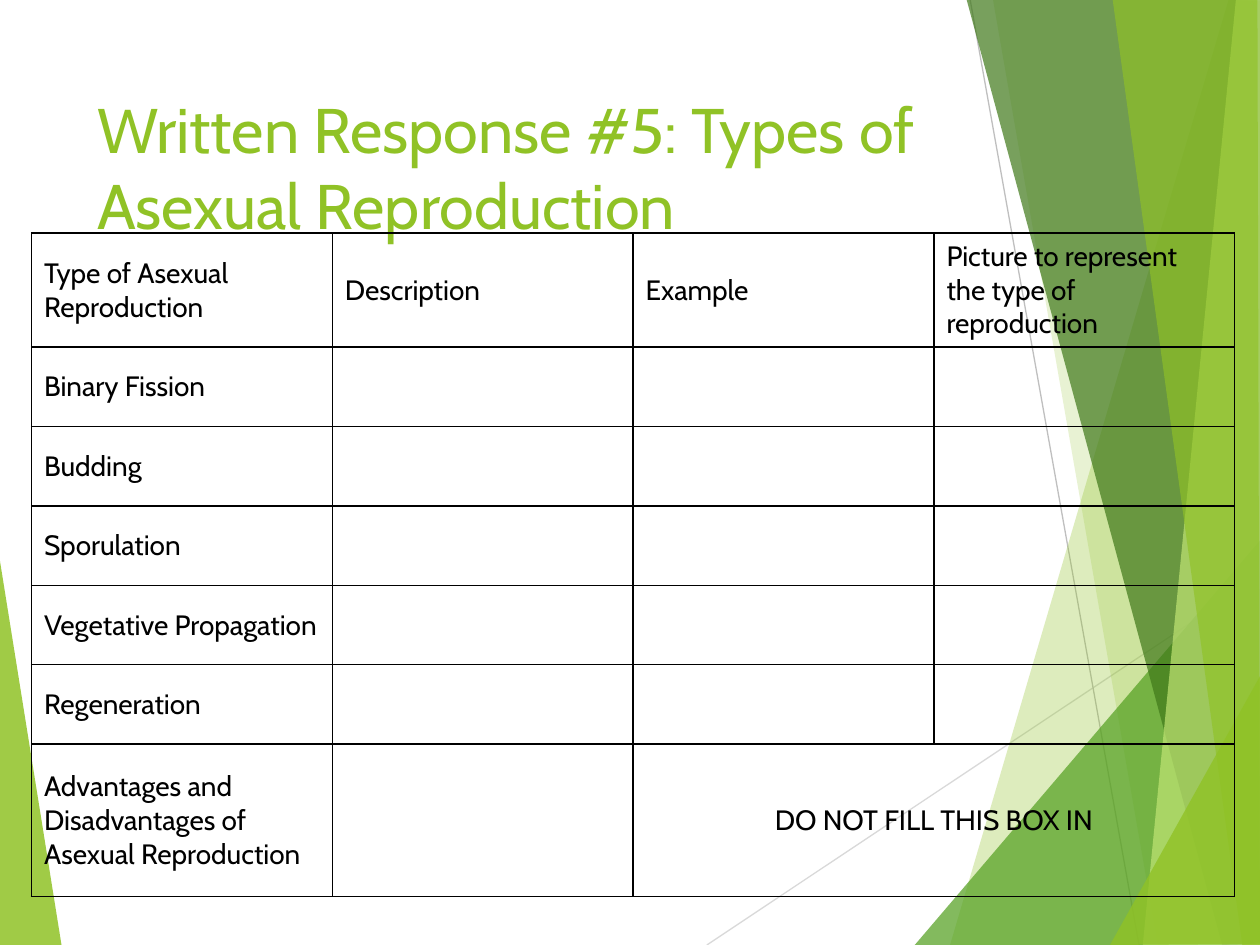
from dataclasses import dataclass

from lxml import etree
from pptx import Presentation
from pptx.dml.color import RGBColor
from pptx.enum.shapes import MSO_CONNECTOR
from pptx.enum.text import MSO_ANCHOR, PP_ALIGN
from pptx.oxml import parse_xml
from pptx.oxml.ns import nsdecls, qn
from pptx.util import Inches, Pt

STRAIGHT = MSO_CONNECTOR.STRAIGHT
TOP, MIDDLE = MSO_ANCHOR.TOP, MSO_ANCHOR.MIDDLE
LEFT, CENTER = PP_ALIGN.LEFT, PP_ALIGN.CENTER


@dataclass(frozen=True)
class Theme:
    font: str = "Cabin"
    lime: str = "90C226"
    green: str = "54A021"
    dark: str = "3F7819"
    pale: str = "C0E474"
    gray: str = "BFBFBF"
    light: str = "D9D9D9"
    ink: str = "000000"
    head: int = 36
    body: int = 16
    rule: float = 0.75
    edge: int = 1


class Deck:
    """Draw styled elements on the current slide."""

    def __init__(self, theme, slide):
        self.theme = theme
        self.slide = slide
        self.shapes = slide.shapes

    def style(self, para, size, color, align=LEFT):
        para.alignment = align
        font = para.font
        font.name, font.size = self.theme.font, Pt(size)
        font.color.rgb = RGBColor.from_string(color)

    def facet(self, color, alpha, points):
        spots = [(Inches(x), Inches(y)) for x, y in points]
        pen = self.shapes.build_freeform(*spots[0])
        pen.add_line_segments(spots[1:], close=True)
        shape = pen.convert_to_shape()
        shape.shadow.inherit = False
        shape.line.fill.background()
        shape.fill.solid()
        shape.fill.fore_color.rgb = RGBColor.from_string(color)
        tint = shape._element.spPr.find(".//" + qn("a:srgbClr"))
        etree.SubElement(tint, qn("a:alpha"), val=str(alpha * 1000))

    def line(self, color, start, end):
        ends = [Inches(value) for value in (*start, *end)]
        line = self.shapes.add_connector(STRAIGHT, *ends)
        line.line.color.rgb = RGBColor.from_string(color)
        line.line.width = Pt(self.theme.rule)
        etree.SubElement(line._element.spPr, qn("a:effectLst"))

    def title(self, text, box):
        title = self.shapes.title
        title.left, title.top, title.width, title.height = map(Inches, box)
        self.shapes._spTree.append(title._element)
        frame = title.text_frame
        frame.text = text
        frame.word_wrap = True
        frame.vertical_anchor = TOP
        self.style(frame.paragraphs[0], self.theme.head, self.theme.lime)

    def border(self, cell):
        props = cell._tc.get_or_add_tcPr()
        for side in "LRTB":
            props.append(parse_xml(
                f'<a:ln{side} {nsdecls("a")} w="{Pt(self.theme.edge)}"><a:solidFill>'
                f'<a:srgbClr val="{self.theme.ink}"/></a:solidFill></a:ln{side}>'))

    def table(self, rows, box, heights, span):
        frame = self.shapes.add_table(len(rows), len(rows[0]), *map(Inches, box))
        table = frame.table
        table.first_row = table.horz_banding = False
        for row, height in zip(table.rows, heights):
            row.height = Inches(height)
        first, last = span
        table.cell(*first).merge(table.cell(*last))
        for i, row in enumerate(rows):
            for j, text in enumerate(row):
                cell = table.cell(i, j)
                self.border(cell)
                cell.fill.background()
                cell.vertical_anchor = MIDDLE
                cell.text = text
                align = CENTER if (i, j) == first else LEFT
                self.style(cell.text_frame.paragraphs[0], self.theme.body,
                           self.theme.ink, align)


def main():
    show = Presentation()
    show.slide_width, show.slide_height = Inches(10), Inches(7.5)
    theme = Theme()
    deck = Deck(theme, show.slides.add_slide(show.slide_layouts[5]))

    deck.facet(theme.lime, 85, [(-0.01, 4.39), (0.49, 7.51), (-0.01, 7.5)])
    deck.line(theme.light, (5.61, 7.5), (10.01, 4.57))
    deck.line(theme.gray, (7.7, 0), (9.04, 7.5))
    facets = [
        (theme.lime, 30, [(9.75, 0), (7.54, 7.5), (10.02, 7.51), (10.01, 0.01)]),
        (theme.lime, 20, [(7.88, -0.01), (9.19, 7.5), (10.01, 7.5), (10.01, -0.01)]),
        (theme.green, 72, [(7.26, 7.5), (10, 4.29), (10.01, 7.5)]),
        (theme.dark, 70, [(7.67, -0.01), (9.7, 7.5), (10.01, 7.49), (10.01, -0.01)]),
        (theme.pale, 70, [(9.81, -0.01), (9.07, 7.5), (10.01, 7.5), (10, -0.01)]),
        (theme.lime, 65, [(8.83, -0.01), (9.86, 7.5), (10, 7.5), (9.98, -0.01)]),
        (theme.lime, 80, [(8.81, 7.5), (10.01, 5.35), (10.01, 7.49)]),
    ]
    for facet in facets:
        deck.facet(*facet)

    deck.title("Written Response #5: Types of Asexual Reproduction",
               (0.67, 0.67, 6.94, 1.44))
    kinds = ["Binary Fission", "Budding", "Sporulation",
             "Vegetative Propagation", "Regeneration"]
    rows = [
        ["Type of Asexual Reproduction", "Description", "Example",
         "Picture to represent the type of reproduction"],
        *([kind, "", "", ""] for kind in kinds),
        ["Advantages and Disadvantages of Asexual Reproduction", "",
         "DO NOT FILL THIS BOX IN", ""],
    ]
    heights = [0.86, *[0.63] * len(kinds), 1.21]
    deck.table(rows, (0.25, 1.85, 9.55, 5.28), heights, ((6, 2), (6, 3)))
    show.save("out.pptx")


if __name__ == "__main__":
    main()
